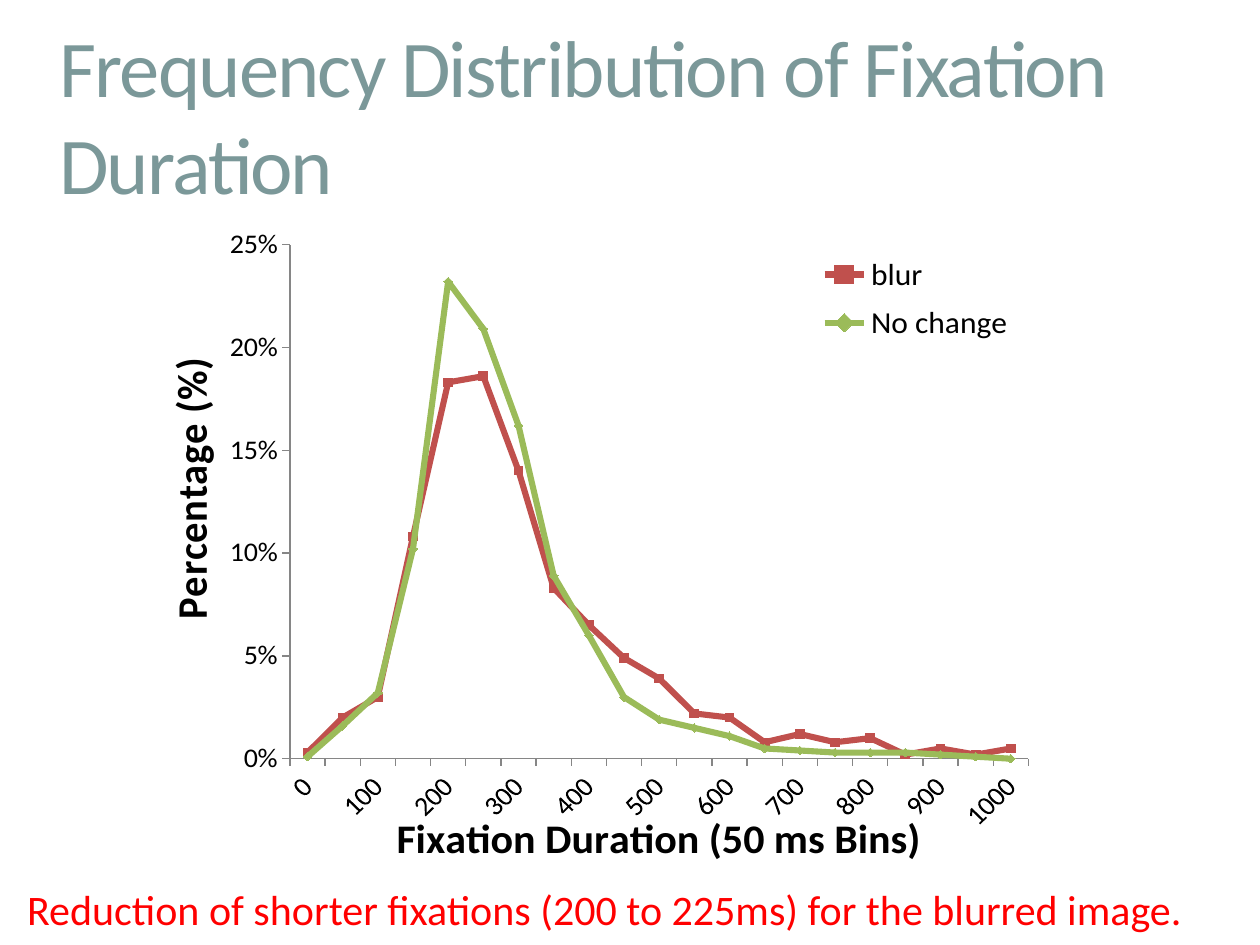
from dataclasses import dataclass

from lxml.etree import SubElement
from pptx import Presentation
from pptx.chart.data import CategoryChartData
from pptx.dml.color import RGBColor
from pptx.enum.chart import XL_CHART_TYPE, XL_LEGEND_POSITION, XL_MARKER_STYLE, XL_TICK_MARK
from pptx.enum.text import MSO_ANCHOR, MSO_AUTO_SIZE, PP_ALIGN
from pptx.oxml import parse_xml
from pptx.oxml.ns import nsdecls, qn
from pptx.util import Cm, Pt

TITLE = "Frequency Distribution of Fixation Duration"
CAPTION = "Reduction of shorter fixations (200 to 225ms) for the blurred image."
X_TITLE = "Fixation Duration (50 ms Bins)"
Y_TITLE = "Percentage (%)"
BINS = [str(start) for start in range(0, 1001, 50)]
# Name, line colour, marker, percentage in each bin
SERIES = [
    ("blur", "C0504D", XL_MARKER_STYLE.SQUARE,
     [0.3, 2, 3, 10.8, 18.3, 18.6, 14, 8.3, 6.5, 4.9, 3.9,
      2.2, 2, 0.8, 1.2, 0.8, 1, 0.2, 0.5, 0.2, 0.5]),
    ("No change", "9BBB59", XL_MARKER_STYLE.DIAMOND,
     [0.1, 1.6, 3.2, 10.2, 23.2, 20.9, 16.2, 8.9, 6, 3, 1.9,
      1.5, 1.1, 0.5, 0.4, 0.3, 0.3, 0.3, 0.2, 0.1, 0]),
]


@dataclass(frozen=True)
class Theme:
    font: str = "Calibri"
    heading: str = "7B9899"
    accent: str = "FF0000"
    text: str = "000000"
    axis: str = "868686"
    heading_size: int = 46
    caption_size: int = 24
    axis_title_size: int = 24
    legend_size: int = 18
    tick_size: int = 16


THEME = Theme()
# Left, top, width, height in centimetres
TITLE_AREA = (0.94, 0.71, 23.22, 3.18)
CHART_AREA = (3.12, 4.42, 18.16, 13.26)
CAPTION_AREA = (0.3, 17.68, 24.74, 1.27)


def area(values):
    return [Cm(value) for value in values]


def style_font(font, size, color=THEME.text, bold=False):
    font.name = THEME.font
    font.size = Pt(size)
    font.bold = bold
    font.color.rgb = RGBColor.from_string(color)


def write(frame, text, size, color=THEME.text, bold=False, spacing=None):
    para = frame.paragraphs[0]
    span = para.add_run()
    span.text = text
    style_font(span.font, size, color, bold)
    if spacing is not None:
        span.font._element.set("spc", str(spacing * 100))
    return para


def place(element, index, **fractions):
    """Give a chart part a manual layout, in fractions of the chart."""
    for old in element.findall(qn("c:layout")):
        element.remove(old)
    layout = parse_xml(f"<c:layout {nsdecls('c')}><c:manualLayout/></c:layout>")
    manual = layout[0]
    if index == 0:
        SubElement(manual, qn("c:layoutTarget")).set("val", "inner")
    for mode in ("xMode", "yMode"):
        SubElement(manual, qn(f"c:{mode}")).set("val", "edge")
    for name, value in fractions.items():
        SubElement(manual, qn(f"c:{name}")).set("val", str(value))
    element.insert(index, layout)


def format_axis(axis, title):
    axis.has_major_gridlines = False
    axis.major_tick_mark = XL_TICK_MARK.OUTSIDE
    axis.minor_tick_mark = XL_TICK_MARK.NONE
    axis.format.line.color.rgb = RGBColor.from_string(THEME.axis)
    style_font(axis.tick_labels.font, THEME.tick_size)
    axis.has_title = True
    write(axis.axis_title.text_frame, title, THEME.axis_title_size, bold=True)


def add_frequency_chart(slide):
    data = CategoryChartData(number_format="0.0%")
    data.categories = BINS
    for name, _, _, percentages in SERIES:
        data.add_series(name, [round(value / 100, 3) for value in percentages])
    chart = slide.shapes.add_chart(
        XL_CHART_TYPE.LINE_MARKERS, *area(CHART_AREA), data).chart
    chart.has_title = False
    style_font(chart.font, 10)
    chart.plots[0].vary_by_categories = False

    for series, (_, color, marker, _) in zip(chart.plots[0].series, SERIES):
        shade = RGBColor.from_string(color)
        series.smooth = False
        series.format.line.width = Pt(3.5)
        series.format.line.color.rgb = shade
        series.marker.style = marker
        series.marker.size = 5
        series.marker.format.fill.solid()
        series.marker.format.fill.fore_color.rgb = shade
        series.marker.format.line.color.rgb = shade

    format_axis(chart.category_axis, X_TITLE)
    format_axis(chart.value_axis, Y_TITLE)
    chart.value_axis.minimum_scale = 0
    chart.value_axis.maximum_scale = 0.25
    chart.value_axis.major_unit = 0.05
    chart.value_axis.tick_labels.number_format = "0%"
    chart.value_axis.tick_labels.number_format_is_linked = False

    chart.has_legend = True
    chart.legend.position = XL_LEGEND_POSITION.RIGHT
    chart.legend.include_in_layout = False
    style_font(chart.legend.font, THEME.legend_size)

    plot_area, = chart.element.xpath("c:chart/c:plotArea")
    legend, = chart.element.xpath("c:chart/c:legend")
    category_axis, = plot_area.xpath("c:catAx")
    value_axis, = plot_area.xpath("c:valAx")
    category_axis.find(qn("c:txPr")).find(qn("a:bodyPr")).set("rot", "-2700000")
    skip = parse_xml(f"<c:tickLblSkip {nsdecls('c')} val='2'/>")
    category_axis.find(qn("c:noMultiLvlLbl")).addprevious(skip)
    value_title = value_axis.find(qn("c:title"))
    body = next(value_title.iter(qn("a:bodyPr")))
    body.set("rot", "-5400000")
    body.set("vert", "horz")
    place(plot_area, 0, x=0.15, y=0.04, w=0.82, h=0.81)
    place(legend, 1, x=0.71, y=0.04, w=0.27, h=0.17)
    place(category_axis.find(qn("c:title")), 1, x=0.26, y=0.92)
    place(value_title, 1, x=0, y=0.22)


def main():
    deck = Presentation()
    deck.slide_width, deck.slide_height = Cm(25.4), Cm(19.05)
    slide = deck.slides.add_slide(deck.slide_layouts[5])

    title = slide.shapes.title
    title.left, title.top, title.width, title.height = area(TITLE_AREA)
    title.text_frame.auto_size = MSO_AUTO_SIZE.NONE
    title.text_frame.vertical_anchor = MSO_ANCHOR.MIDDLE
    heading = write(title.text_frame, TITLE, THEME.heading_size,
                    THEME.heading, spacing=-1)
    heading.alignment = PP_ALIGN.LEFT

    add_frequency_chart(slide)

    caption = slide.shapes.add_textbox(*area(CAPTION_AREA))
    caption.text_frame.word_wrap = True
    caption.text_frame.auto_size = MSO_AUTO_SIZE.SHAPE_TO_FIT_TEXT
    write(caption.text_frame, CAPTION, THEME.caption_size, THEME.accent)

    deck.save("out.pptx")


if __name__ == "__main__":
    main()
